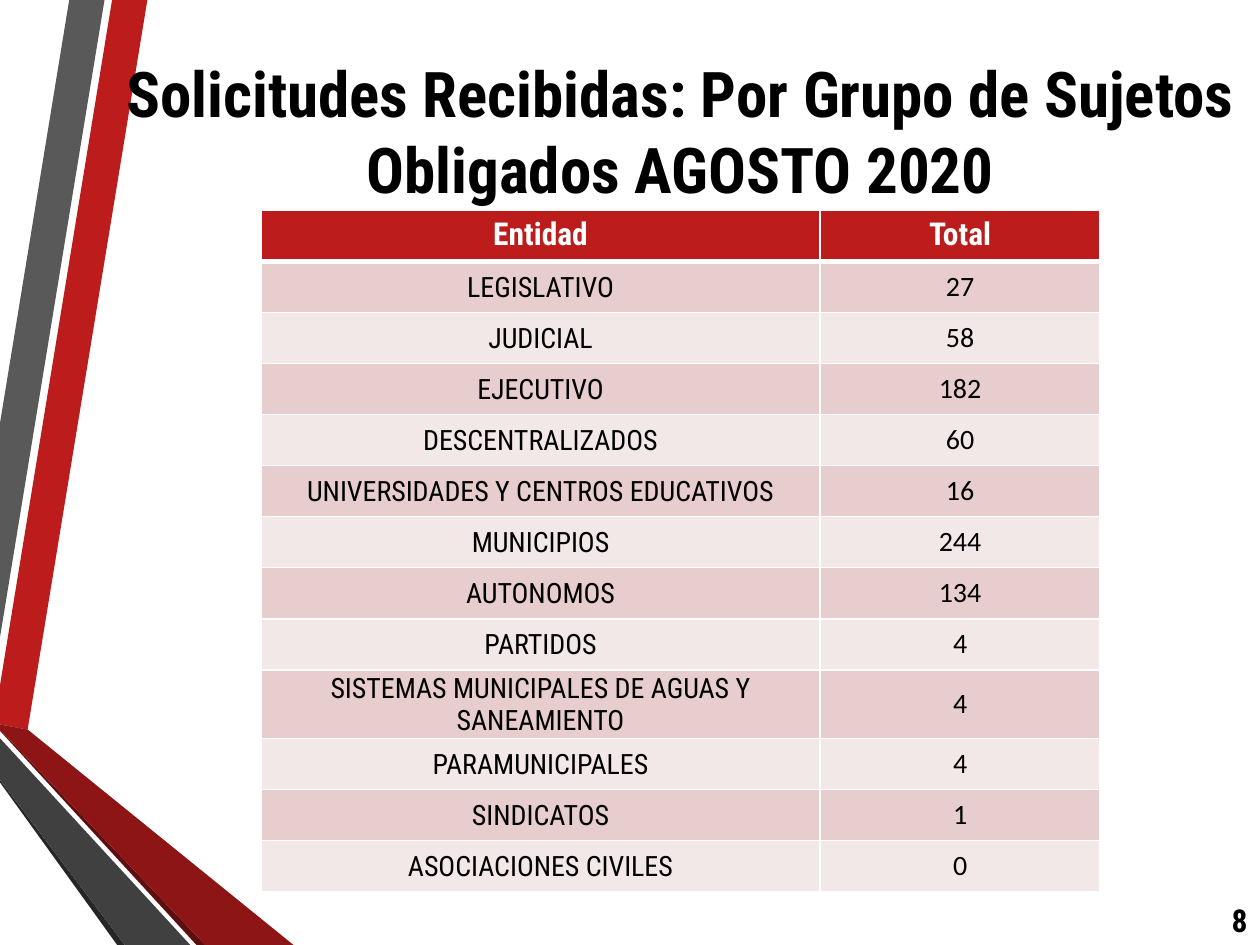
from lxml.etree import SubElement
from pptx import Presentation
from pptx.dml.color import RGBColor
from pptx.enum.text import MSO_ANCHOR, MSO_AUTO_SIZE, PP_ALIGN
from pptx.oxml.ns import qn
from pptx.util import Inches, Pt

RED = RGBColor(0xBC, 0x1C, 0x1C)
DARK_RED = RGBColor(0x8D, 0x15, 0x15)
DEEP_RED = RGBColor(0x5E, 0x0E, 0x0E)
GRAY = RGBColor(0x59, 0x59, 0x59)
DARK_GRAY = RGBColor(0x40, 0x40, 0x40)
DEEP_GRAY = RGBColor(0x26, 0x26, 0x26)
PINK = RGBColor(0xE7, 0xCD, 0xCD)
PALE_PINK = RGBColor(0xF3, 0xE8, 0xE8)
BLACK = RGBColor(0, 0, 0)
WHITE = RGBColor(0xFF, 0xFF, 0xFF)
CONDENSED = "Roboto Condensed"


def add_run(paragraph, text, size, color=BLACK, bold=False, font=CONDENSED):
    run = paragraph.add_run()
    run.text = text
    run.font.name = font
    run.font.size = Pt(size)
    run.font.bold = bold
    run.font.color.rgb = color


def add_border(cell, side, width):
    line = SubElement(cell._tc.get_or_add_tcPr(), qn(f"a:ln{side}"), w=str(Pt(width)))
    fill = SubElement(line, qn("a:solidFill"))
    SubElement(fill, qn("a:srgbClr"), val=str(WHITE))


presentation = Presentation()
presentation.slide_width = Inches(10)
presentation.slide_height = Inches(7.5)
slide = presentation.slides.add_slide(presentation.slide_layouts[5])

# Folded ribbons on the left
ribbons = [
    (RED, [(0, 5.44), (0, 5.75), (0.22, 5.79), (1.17, 0), (0.89, 0)]),
    (GRAY, [(0.83, 0), (0.55, 0), (0, 3.36), (0, 5.06)]),
    (DEEP_GRAY, [(0, 6.19), (0, 6.21), (0.93, 7.5), (0.99, 7.5)]),
    (DEEP_RED, [(0, 5.79), (0, 5.8), (1.56, 7.5), (1.63, 7.5)]),
    (DARK_RED, [(0, 5.79), (1.63, 7.5), (2.33, 7.5), (0.22, 5.79), (0, 5.75)]),
    (DARK_GRAY, [(0, 6.19), (0.99, 7.5), (1.51, 7.5), (0, 5.86)]),
]
for color, corners in ribbons:
    points = [(Inches(x), Inches(y)) for x, y in corners]
    builder = slide.shapes.build_freeform(*points[0])
    builder.add_line_segments(points[1:], close=True)
    ribbon = builder.convert_to_shape()
    ribbon.shadow.inherit = False
    ribbon.fill.solid()
    ribbon.fill.fore_color.rgb = color
    ribbon.line.fill.background()

# Slide number
number_box = slide.shapes.add_textbox(Inches(9.53), Inches(7.1), Inches(0.47), Inches(0.4))
number_box.text_frame.word_wrap = True
number_box.text_frame.vertical_anchor = MSO_ANCHOR.MIDDLE
paragraph = number_box.text_frame.paragraphs[0]
paragraph.alignment = PP_ALIGN.RIGHT
add_run(paragraph, "8", 18, bold=True)

# Table of requests by entity
rows = [
    ("Entidad", "Total"),
    ("LEGISLATIVO", "27"),
    ("JUDICIAL", "58"),
    ("EJECUTIVO", "182"),
    ("DESCENTRALIZADOS", "60"),
    ("UNIVERSIDADES Y CENTROS EDUCATIVOS", "16"),
    ("MUNICIPIOS", "244"),
    ("AUTONOMOS", "134"),
    ("PARTIDOS", "4"),
    ("SISTEMAS MUNICIPALES DE AGUAS Y SANEAMIENTO", "4"),
    ("PARAMUNICIPALES", "4"),
    ("SINDICATOS", "1"),
    ("ASOCIACIONES CIVILES", "0"),
]
table = slide.shapes.add_table(
    len(rows), 2, Inches(2.07), Inches(1.67), Inches(6.66), Inches(5.27)
).table
table.columns[0].width = Inches(4.44)
table.columns[1].width = Inches(2.22)
for row_index, row in enumerate(rows):
    is_header = row_index == 0
    for column_index, text in enumerate(row):
        cell = table.cell(row_index, column_index)
        is_entity = column_index == 0
        if not is_header:
            cell.vertical_anchor = MSO_ANCHOR.MIDDLE
            if is_entity:
                cell.margin_left = cell.margin_top = cell.margin_right = Inches(0.01)
                cell.margin_bottom = 0
        add_border(cell, "L", 1)
        add_border(cell, "R", 1)
        add_border(cell, "T", 3 if row_index == 1 else 1)
        add_border(cell, "B", 3 if is_header else 1)
        cell.fill.solid()
        cell.fill.fore_color.rgb = RED if is_header else PINK if row_index % 2 else PALE_PINK
        paragraph = cell.text_frame.paragraphs[0]
        paragraph.alignment = PP_ALIGN.CENTER
        if is_header:
            add_run(paragraph, text, 18, WHITE, bold=True)
        else:
            add_run(paragraph, text, 16, font=CONDENSED if is_entity else "Calibri")

# Title, brought in front of the ribbons
title = slide.shapes.title
title.left, title.top = Inches(0.65), Inches(0.67)
title.width, title.height = Inches(9.5), Inches(0.73)
title.text_frame.auto_size = MSO_AUTO_SIZE.NONE
title.text_frame.vertical_anchor = MSO_ANCHOR.MIDDLE
paragraph = title.text_frame.paragraphs[0]
paragraph.alignment = PP_ALIGN.CENTER
add_run(paragraph, "Solicitudes Recibidas: Por Grupo de Sujetos", 36, bold=True)
paragraph.add_line_break()
add_run(paragraph, "Obligados AGOSTO 2020", 36, bold=True)
title.element.getparent().append(title.element)

presentation.save("out.pptx")
